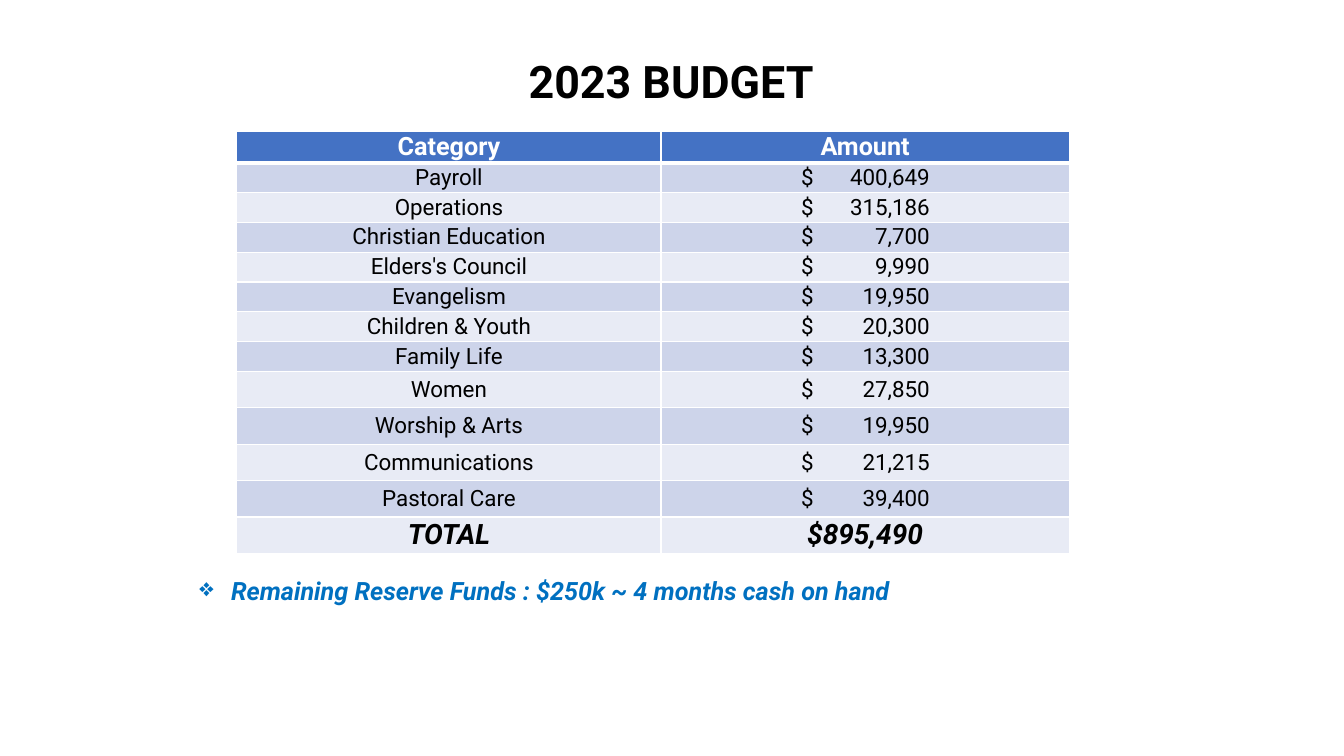
"""Build the 2023 budget slide."""
from dataclasses import dataclass

from lxml.etree import SubElement
from pptx import Presentation
from pptx.dml.color import RGBColor
from pptx.enum.text import MSO_ANCHOR, PP_ALIGN
from pptx.oxml.ns import qn
from pptx.util import Pt


@dataclass(frozen=True)
class Theme:
    """Colours, font and type sizes of the slide."""
    font: str = "Roboto"
    black: str = "000000"
    white: str = "FFFFFF"
    header: str = "4472C4"
    bands: tuple = ("CDD4EA", "E8EBF5")
    accent: str = "0070C0"
    title_size: int = 32
    total_size: int = 20
    heading_size: int = 18
    body_size: int = 16


THEME = Theme()
BUDGET = {
    "Payroll": 400649,
    "Operations": 315186,
    "Christian Education": 7700,
    "Elders's Council": 9990,
    "Evangelism": 19950,
    "Children & Youth": 20300,
    "Family Life": 13300,
    "Women": 27850,
    "Worship & Arts": 19950,
    "Communications": 21215,
    "Pastoral Care": 39400,
}
COLUMN_WIDTHS = (303, 291.6)
ROW_HEIGHTS = (22.3, *[21.3] * 7, *[26] * 5)
DOLLAR_INDENT = 100
AMOUNT_TAB = 92


def write_text(frame, text, size=THEME.body_size, color=THEME.black, bold=False,
               italic=False, align=PP_ALIGN.CENTER, anchor=MSO_ANCHOR.MIDDLE):
    """Fill a text frame with one formatted paragraph and return it."""
    frame.word_wrap = True
    frame.vertical_anchor = anchor
    paragraph = frame.paragraphs[0]
    paragraph.alignment = align
    run = paragraph.add_run()
    run.text = text
    run.font.name = THEME.font
    run.font.size = Pt(size)
    run.font.bold = bold
    run.font.italic = italic
    run.font.color.rgb = RGBColor.from_string(color)
    return paragraph


def add_text(slide, left, top, width, height, text, **text_format):
    """Add a text box and return its paragraph."""
    box = slide.shapes.add_textbox(Pt(left), Pt(top), Pt(width), Pt(height))
    return write_text(box.text_frame, text, **text_format)


def add_bullet(paragraph, character, color, indent):
    """Give a paragraph a coloured bullet with a hanging indent."""
    properties = paragraph._p.get_or_add_pPr()
    properties.set("marL", str(Pt(indent)))
    properties.set("indent", str(-Pt(indent)))
    bullet_color = SubElement(properties, qn("a:buClr"))
    SubElement(bullet_color, qn("a:srgbClr"), val=color)
    SubElement(properties, qn("a:buChar"), char=character)


def add_right_tab(paragraph, position):
    """Add a right-aligned tab stop to a paragraph."""
    tabs = SubElement(paragraph._p.get_or_add_pPr(), qn("a:tabLst"))
    SubElement(tabs, qn("a:tab"), pos=str(Pt(position)), algn="r")


def style_cell(cell, fill, top=1, bottom=1):
    """Set the fill, margins and white borders of a cell."""
    cell.margin_left = cell.margin_right = cell.margin_top = cell.margin_bottom = 0
    properties = cell._tc.get_or_add_tcPr()
    for side, width in {"L": 1, "R": 1, "T": top, "B": bottom}.items():
        line = SubElement(properties, qn(f"a:ln{side}"), w=str(Pt(width)))
        line_fill = SubElement(line, qn("a:solidFill"))
        SubElement(line_fill, qn("a:srgbClr"), val=THEME.white)
    cell.fill.solid()
    cell.fill.fore_color.rgb = RGBColor.from_string(fill)


def write_amount(cell, amount):
    """Write an amount with its dollar sign and digits in aligned columns."""
    cell.margin_left = Pt(DOLLAR_INDENT)
    paragraph = write_text(cell.text_frame, f"$\t{amount:,}", align=PP_ALIGN.LEFT)
    add_right_tab(paragraph, AMOUNT_TAB)


def write_row(cells, texts, **text_format):
    """Write one text into each cell of a row."""
    for cell, text in zip(cells, texts):
        write_text(cell.text_frame, text, **text_format)
        cell.vertical_anchor = MSO_ANCHOR.MIDDLE


def add_budget_table(slide, left, top):
    """Add the budget table with header, categories and total."""
    table = slide.shapes.add_table(
        len(ROW_HEIGHTS), len(COLUMN_WIDTHS), Pt(left), Pt(top),
        Pt(sum(COLUMN_WIDTHS)), Pt(sum(ROW_HEIGHTS))).table
    for column, width in zip(table.columns, COLUMN_WIDTHS):
        column.width = Pt(width)
    for index, (row, height) in enumerate(zip(table.rows, ROW_HEIGHTS)):
        row.height = Pt(height)
        fill = THEME.bands[(index - 1) % 2] if index else THEME.header
        for cell in row.cells:
            style_cell(cell, fill, top=3 if index == 1 else 1, bottom=1 if index else 3)
            cell.vertical_anchor = MSO_ANCHOR.MIDDLE
    header, *categories, total = table.rows
    write_row(header.cells, ("Category", "Amount"), size=THEME.heading_size,
              color=THEME.white, bold=True)
    for row, (category, amount) in zip(categories, BUDGET.items()):
        write_row(row.cells, (category,))
        write_amount(row.cells[1], amount)
    write_row(total.cells, ("TOTAL", f"${sum(BUDGET.values()):,}"),
              size=THEME.total_size, bold=True, italic=True)


def main():
    """Build and save the presentation."""
    presentation = Presentation()
    presentation.slide_width, presentation.slide_height = Pt(960), Pt(540)
    slide = presentation.slides.add_slide(presentation.slide_layouts[6])
    add_budget_table(slide, 169.2, 94)
    title = add_text(slide, 169.2, 36.7, 620.6, 46, "2023 BUDGET",
                     size=THEME.title_size, bold=True)
    title.line_spacing = 0.9
    reserve = add_text(slide, 135.4, 407.5, 683.3, 51,
                       "Remaining Reserve Funds : $250k ~ 4 months cash on hand",
                       size=THEME.heading_size, color=THEME.accent, bold=True,
                       italic=True, align=PP_ALIGN.LEFT, anchor=MSO_ANCHOR.TOP)
    add_bullet(reserve, "❖", THEME.accent, 22.5)
    presentation.save("out.pptx")


if __name__ == "__main__":
    main()
